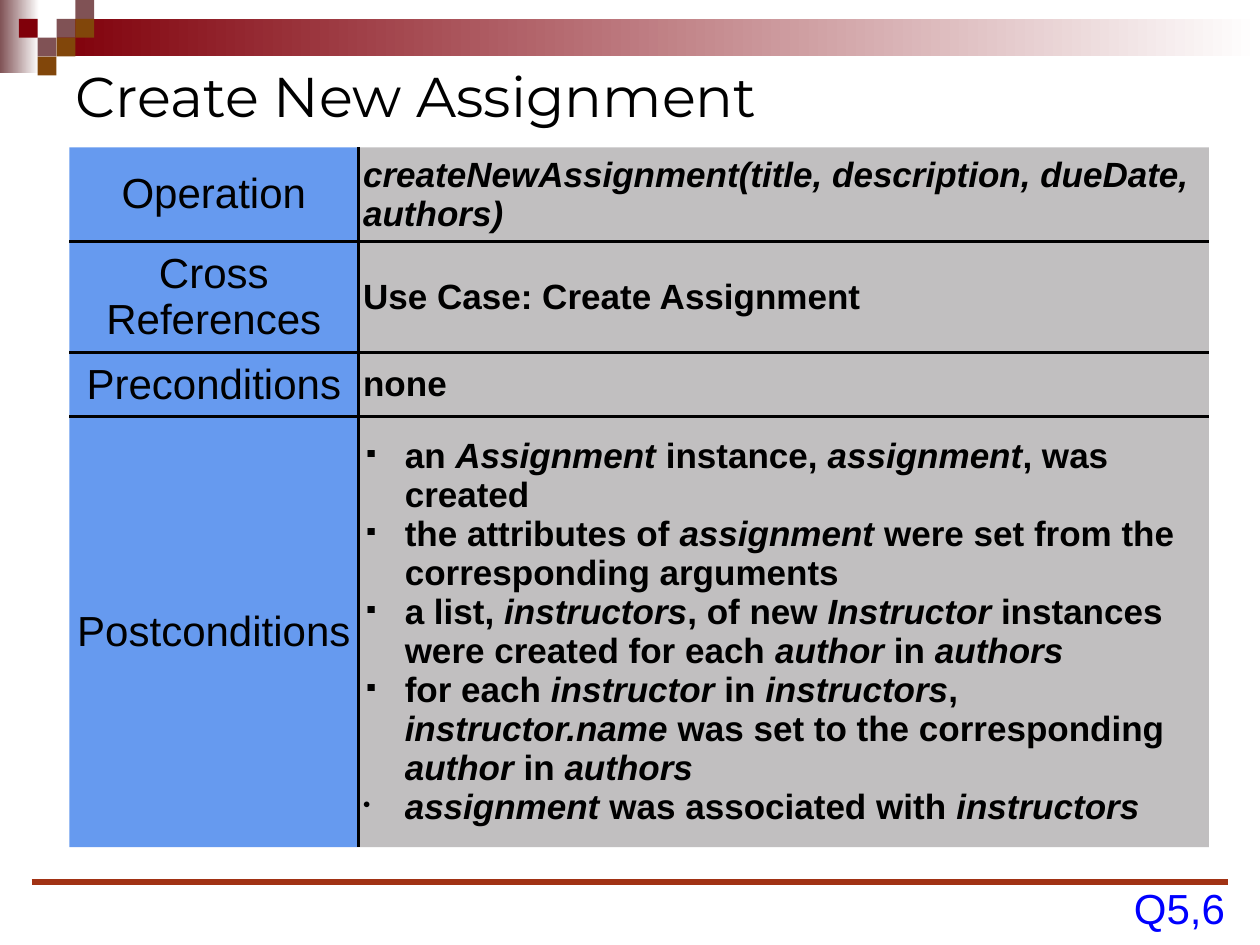
from dataclasses import dataclass

from lxml.etree import SubElement
from pptx import Presentation
from pptx.dml.color import RGBColor
from pptx.enum.shapes import MSO_CONNECTOR, MSO_SHAPE
from pptx.enum.text import MSO_ANCHOR, MSO_AUTO_SIZE, PP_ALIGN
from pptx.oxml.ns import qn
from pptx.util import Cm, Pt

COLORS = {
    "black": "000000",
    "white": "FFFFFF",
    "mauve": "805255",
    "maroon": "80000A",
    "brown": "81460A",
    "rust": "A13214",
    "blue": "0000FF",
    "label": "0057E5",
    "detail": "544E51",
}
TILE = 0.38
COLUMN_WIDTHS = (5.82, 17.15)
CELL_MARGIN = 0.1
BULLET_INDENT = 0.84


@dataclass
class Band:
    left: float
    top: float
    width: float
    height: float
    color: str


@dataclass
class Tile:
    column: int
    row: int
    color: str


@dataclass
class ContractRow:
    label: str
    height: float
    details: list[str]
    bullets: str = ""


BANDS = [
    Band(0, 0, 0.79, 1.47, "mauve"),
    Band(1.14, 0.38, 24.26, 0.76, "maroon"),
]
TILES = [
    Tile(3, 1, "mauve"),
    Tile(4, 0, "mauve"),
    Tile(4, 1, "brown"),
    Tile(2, 2, "mauve"),
    Tile(1, 1, "maroon"),
    Tile(3, 2, "brown"),
    Tile(2, 3, "brown"),
]
# Asterisks enclose italic words.
CONTRACT = [
    ContractRow("Operation", 1.88,
                ["*createNewAssignment(title, description, dueDate, authors)*"]),
    ContractRow("Cross References", 2.24, ["Use Case: Create Assignment"]),
    ContractRow("Preconditions", 1.3, ["none"]),
    ContractRow("Postconditions", 8.66, [
        "an *Assignment* instance, *assignment*, was created",
        "the attributes of *assignment* were set from the corresponding arguments",
        "a list, *instructors*, of new *Instructor* instances were created "
        "for each *author* in *authors*",
        "for each *instructor* in *instructors*, *instructor.name* was set "
        "to the corresponding *author* in *authors*",
        "*assignment* was associated with *instructors*",
    ], "▪▪▪▪•"),
]


def rgb(color: str) -> RGBColor:
    return RGBColor.from_string(COLORS[color])


def set_font(paragraph, size: int, color: str, name: str = "Arial", bold: bool = False) -> None:
    font = paragraph.font
    font.name, font.size, font.bold = name, Pt(size), bold
    font.color.rgb = rgb(color)


def add_block(slide, left: float, top: float, width: float, height: float):
    block = slide.shapes.add_shape(
        MSO_SHAPE.RECTANGLE, Cm(left), Cm(top), Cm(width), Cm(height))
    block.shadow.inherit = False
    block.line.fill.background()
    return block


def draw_band(slide, band: Band) -> None:
    fill = add_block(slide, band.left, band.top, band.width, band.height).fill
    fill.gradient()
    fill.gradient_angle = 0
    for stop, color, position in zip(fill.gradient_stops, (band.color, "white"), (0, 1)):
        stop.color.rgb = rgb(color)
        stop.position = position


def draw_tile(slide, tile: Tile) -> None:
    fill = add_block(slide, tile.column * TILE, tile.row * TILE, TILE, TILE).fill
    fill.solid()
    fill.fore_color.rgb = rgb(tile.color)


def draw_footer(slide) -> None:
    rule = slide.shapes.add_connector(
        MSO_CONNECTOR.STRAIGHT, Cm(0.64), Cm(17.78), Cm(24.76), Cm(17.78))
    rule.line.color.rgb = rgb("rust")
    rule.line.width = Pt(3)
    SubElement(rule._element.spPr, qn("a:effectLst"))

    question = slide.shapes.add_textbox(Cm(22.86), Cm(17.78), Cm(1.85), Cm(1.02)).text_frame
    question.margin_left = question.margin_right = 0
    question.margin_top = question.margin_bottom = 0
    question.word_wrap = False
    question.auto_size = MSO_AUTO_SIZE.SHAPE_TO_FIT_TEXT
    question.vertical_anchor = MSO_ANCHOR.MIDDLE
    question.text = "Q5,6"
    set_font(question.paragraphs[0], 24, "blue")


def style_cell(cell, color: str, opacity: int, inner_sides: str) -> None:
    properties = cell._tc.get_or_add_tcPr()
    for side in "LRTB":
        border = SubElement(properties, qn(f"a:ln{side}"), w=str(Pt(2)))
        if side in inner_sides:
            solid = SubElement(border, qn("a:solidFill"))
            SubElement(solid, qn("a:srgbClr"), val=COLORS["black"])
        else:
            SubElement(border, qn("a:noFill"))
    cell.fill.solid()
    cell.fill.fore_color.rgb = rgb(color)
    tint = properties.find(qn("a:solidFill")).find(qn("a:srgbClr"))
    SubElement(tint, qn("a:alpha"), val=str(opacity * 1000))
    cell.vertical_anchor = MSO_ANCHOR.MIDDLE
    cell.margin_left = cell.margin_right = Cm(CELL_MARGIN)
    cell.margin_top = cell.margin_bottom = Cm(CELL_MARGIN)


def add_bullet(paragraph, symbol: str) -> None:
    properties = paragraph._p.get_or_add_pPr()
    properties.set("marL", str(Cm(BULLET_INDENT)))
    properties.set("indent", str(-Cm(BULLET_INDENT)))
    SubElement(properties, qn("a:buSzPct"), val="62000")
    SubElement(properties, qn("a:buChar"), char=symbol)


def write_details(frame, row: ContractRow) -> None:
    for index, detail in enumerate(row.details):
        paragraph = frame.add_paragraph() if index else frame.paragraphs[0]
        if row.bullets:
            add_bullet(paragraph, row.bullets[index])
        set_font(paragraph, 20, "black", bold=True)
        for part, words in enumerate(detail.split("*")):
            if words:
                run = paragraph.add_run()
                run.text = words
                run.font.italic = part % 2 == 1


def draw_contract(slide) -> None:
    table = slide.shapes.add_table(
        len(CONTRACT), len(COLUMN_WIDTHS), Cm(1.4), Cm(2.97),
        Cm(sum(COLUMN_WIDTHS)), Cm(sum(row.height for row in CONTRACT))).table
    table.first_row = table.horz_banding = False
    for column, width in zip(table.columns, COLUMN_WIDTHS):
        column.width = Cm(width)
    for index, row in enumerate(CONTRACT):
        table.rows[index].height = Cm(row.height)
        rules = ("T" if index else "") + ("B" if index < len(CONTRACT) - 1 else "")
        label, details = table.cell(index, 0), table.cell(index, 1)
        style_cell(label, "label", 60, rules + "R")
        style_cell(details, "detail", 36, rules + "L")
        label.text = row.label
        heading = label.text_frame.paragraphs[0]
        heading.alignment = PP_ALIGN.CENTER
        set_font(heading, 24, "black")
        write_details(details.text_frame, row)


def main() -> None:
    presentation = Presentation()
    presentation.slide_width, presentation.slide_height = Cm(25.4), Cm(19.05)
    slide = presentation.slides.add_slide(presentation.slide_layouts[5])
    for band in BANDS:
        draw_band(slide, band)
    for tile in TILES:
        draw_tile(slide, tile)
    title = slide.shapes.title
    title.left, title.top, title.width, title.height = Cm(1.27), Cm(1.07), Cm(22.86), Cm(1.7)
    title.text_frame.text = "Create New Assignment"
    title.text_frame.vertical_anchor = MSO_ANCHOR.MIDDLE
    heading = title.text_frame.paragraphs[0]
    heading.alignment = PP_ALIGN.LEFT
    set_font(heading, 32, "black", "Montserrat")
    draw_footer(slide)
    draw_contract(slide)
    presentation.save("out.pptx")


if __name__ == "__main__":
    main()
